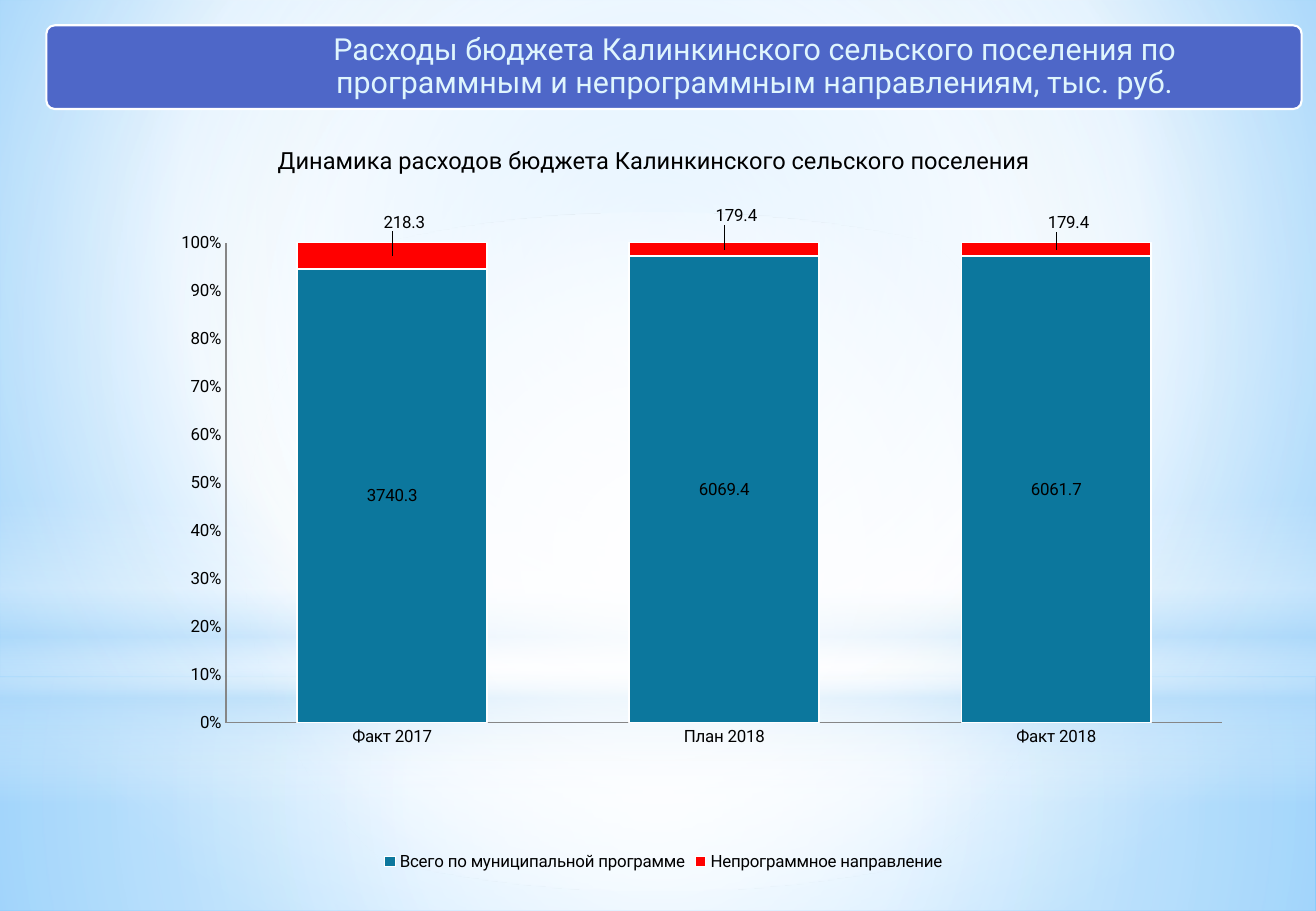
from dataclasses import dataclass

from lxml import etree
from pptx import Presentation
from pptx.chart.data import CategoryChartData
from pptx.dml.color import RGBColor
from pptx.enum.chart import XL_CHART_TYPE as ChartType
from pptx.enum.chart import XL_LEGEND_POSITION as LegendPosition
from pptx.enum.chart import XL_TICK_MARK as TickMark
from pptx.enum.shapes import MSO_SHAPE as Shape
from pptx.enum.text import MSO_ANCHOR as Anchor
from pptx.enum.text import PP_ALIGN as Align
from pptx.oxml.ns import qn
from pptx.util import Cm, Pt


@dataclass(frozen=True)
class Theme:
    """Colours, font and type sizes of the slide."""
    font: str = "Roboto"
    white: str = "FFFFFF"
    black: str = "000000"
    haze: str = "B4DCFA"
    sky: str = "9ED5FF"
    deep_sky: str = "5BB9FF"
    banner: str = "4E67C8"
    banner_text: str = "DFF5FD"
    program: str = "0C779D"
    other: str = "FF0000"
    axis: str = "868686"
    title_size: int = 18
    subtitle_size: int = 14
    chart_size: int = 10


THEME = Theme()
WIDTH, HEIGHT = 27.51, 19.05
CENTRE = (50, 50, 50, 50)
YEARS = ("Факт 2017", "План 2018", "Факт 2018")
EXPENSES = (
    ("Всего по муниципальной программе", (3740.3, 6069.4, 6061.7), THEME.program),
    ("Непрограммное направление", (218.3, 179.4, 179.4), THEME.other),
)
LABEL_SHIFTS = ((0.01, -0.05), (0.01, -0.05), (0.01, -0.04))


def set_values(target, values):
    """Set attributes of an object from a dict."""
    for name, value in values.items():
        setattr(target, name, value)


def style_font(font, size, colour):
    """Apply the theme font with a size and a colour."""
    set_values(font, {"name": THEME.font, "size": Pt(size)})
    font.color.rgb = RGBColor.from_string(colour)


def style_line(line, colour, width):
    """Set the colour and width of an outline."""
    line.color.rgb = RGBColor.from_string(colour)
    line.width = Pt(width)


def set_gradient(parent, stops, focus=None):
    """Replace the solid fill in parent by a circular or vertical gradient."""
    gradient = etree.Element(qn("a:gradFill"), rotWithShape="1")
    stop_list = etree.SubElement(gradient, qn("a:gsLst"))
    for position, colour, opacity in stops:
        stop = etree.SubElement(stop_list, qn("a:gs"), pos=str(position * 1000))
        tint = etree.SubElement(stop, qn("a:srgbClr"), val=colour)
        if opacity < 100:
            etree.SubElement(tint, qn("a:alpha"), val=str(opacity * 1000))
    if focus:
        circle = etree.SubElement(gradient, qn("a:path"), path="circle")
        sides = {side: str(value * 1000) for side, value in zip("ltrb", focus)}
        etree.SubElement(circle, qn("a:fillToRect"), **sides)
    else:
        etree.SubElement(gradient, qn("a:lin"), ang="5400000", scaled="0")
    parent.replace(parent.find(qn("a:solidFill")), gradient)


def add_panel(page, kind, frame, colour):
    """Add a filled shape without outline or shadow."""
    panel = page.shapes.add_shape(kind, *map(Cm, frame))
    panel.shadow.inherit = False
    panel.fill.solid()
    panel.fill.fore_color.rgb = RGBColor.from_string(colour)
    panel.line.fill.background()
    return panel


def add_backdrop(page):
    """Paint the background and its four translucent layers."""
    white, haze = THEME.white, THEME.haze
    page.background.fill.solid()
    sky = ((0, THEME.sky, 100), (60, white, 100), (100, THEME.deep_sky, 100))
    set_gradient(next(page.element.iter(qn("p:bgPr"))), sky, (20, 10, 20, 60))
    horizon = 14.17
    layers = (
        (Shape.RECTANGLE, horizon, HEIGHT - horizon,
         ((0, white, 91), (37, white, 76), (100, haze, 79)), CENTRE),
        (Shape.RECTANGLE, 0, horizon,
         ((0, white, 89), (48, white, 62), (100, haze, 79)), CENTRE),
        (Shape.RECTANGLE, 10.46, 6.35,
         ((0, white, 0), (29, white, 30), (45, haze, 40), (55, white, 26),
          (65, haze, 60), (100, white, 0)), None),
        (Shape.OVAL, 4.45, horizon, ((0, white, 100), (56, white, 0)), CENTRE),
    )
    for kind, top, height, stops, focus in layers:
        layer = add_panel(page, kind, (0, top, WIDTH, height), white)
        set_gradient(layer.element.spPr, stops, focus)


def add_text(page, frame, text, size, colour, box_format, para_format):
    """Add a wrapped, centred text box."""
    box = page.shapes.add_textbox(*map(Cm, frame)).text_frame
    set_values(box, {"word_wrap": True, **box_format})
    para = box.paragraphs[0]
    set_values(para, {"alignment": Align.CENTER, **para_format})
    span = para.add_run()
    span.text = text
    style_font(span.font, size, colour)


def add_banner(page):
    """Add the rounded title banner."""
    banner = add_panel(page, Shape.ROUNDED_RECTANGLE, (0.97, 0.53, 26.24, 1.75), THEME.banner)
    banner.adjustments[0] = 0.1
    style_line(banner.line, THEME.white, 1.25)
    add_text(
        page, (6.38, 0.53, 20.8, 1.75),
        "Расходы бюджета Калинкинского сельского поселения по "
        "программным и непрограммным направлениям, тыс. руб.",
        THEME.title_size, THEME.banner_text,
        {"vertical_anchor": Anchor.MIDDLE, "margin_left": 0, "margin_right": Cm(2),
         "margin_top": Cm(0.18), "margin_bottom": Cm(0.18)},
        {"line_spacing": 0.9})


def set_layout(parent, index, values):
    """Put a manual layout into a chart element."""
    for previous in parent.findall(qn("c:layout")):
        parent.remove(previous)
    layout = etree.Element(qn("c:layout"))
    manual = etree.SubElement(layout, qn("c:manualLayout"))
    for name, value in values.items():
        etree.SubElement(manual, qn(f"c:{name}"), val=str(value))
    parent.insert(index, layout)


def add_expense_chart(page):
    """Add the stacked chart of expenses by year."""
    data = CategoryChartData()
    data.categories = YEARS
    for name, values, _ in EXPENSES:
        data.add_series(name, values)
    frame = map(Cm, (1.17, 4.32, 25.4, 14))
    chart = page.shapes.add_chart(ChartType.COLUMN_STACKED_100, *frame, data).chart
    style_font(chart.font, THEME.chart_size, THEME.black)
    set_values(chart, {"has_title": False, "has_legend": True})
    set_values(chart.legend, {"position": LegendPosition.BOTTOM, "include_in_layout": False})
    for axis in (chart.category_axis, chart.value_axis):
        set_values(axis, {"has_major_gridlines": False, "major_tick_mark": TickMark.NONE,
                          "minor_tick_mark": TickMark.NONE})
        style_line(axis.format.line, THEME.axis, 0.75)
    set_values(chart.value_axis, {"minimum_scale": 0, "maximum_scale": 1, "major_unit": 0.1})
    set_values(chart.value_axis.tick_labels,
               {"number_format": "0%", "number_format_is_linked": False})
    plot = chart.plots[0]
    set_values(plot, {"gap_width": 75, "overlap": 100, "vary_by_categories": False})
    for series, (_, _, colour) in zip(plot.series, EXPENSES):
        series.format.fill.solid()
        series.format.fill.fore_color.rgb = RGBColor.from_string(colour)
        style_line(series.format.line, THEME.white, 1)
        series.data_labels.show_value = True
        style_font(series.data_labels.font, THEME.chart_size, THEME.black)
    for index, (right, down) in enumerate(LABEL_SHIFTS):
        label = plot.series[1].points[index].data_label
        style_font(label.font, THEME.chart_size, THEME.black)
    area = next(chart.element.iter(qn("c:plotArea"))) if hasattr(chart, "element") else \
        next(chart._chartSpace.iter(qn("c:plotArea")))
    for label, (right, down) in zip(area.iter(qn("c:dLbl")), LABEL_SHIFTS):
        set_layout(label, 1, {"x": right, "y": down})
    set_layout(area, 0, {"layoutTarget": "inner", "xMode": "edge", "yMode": "edge",
                         "x": 0.14, "y": 0.05, "w": 0.82, "h": 0.72})


def main():
    """Build the slide and save the deck."""
    deck = Presentation()
    set_values(deck, {"slide_width": Cm(WIDTH), "slide_height": Cm(HEIGHT)})
    page = deck.slides.add_slide(deck.slide_layouts[6])
    add_backdrop(page)
    add_banner(page)
    add_expense_chart(page)
    add_text(page, (4.17, 2.92, 19, 0.86),
             "Динамика расходов бюджета Калинкинского сельского поселения",
             THEME.subtitle_size, THEME.black, {}, {})
    deck.save("out.pptx")


if __name__ == "__main__":
    main()
